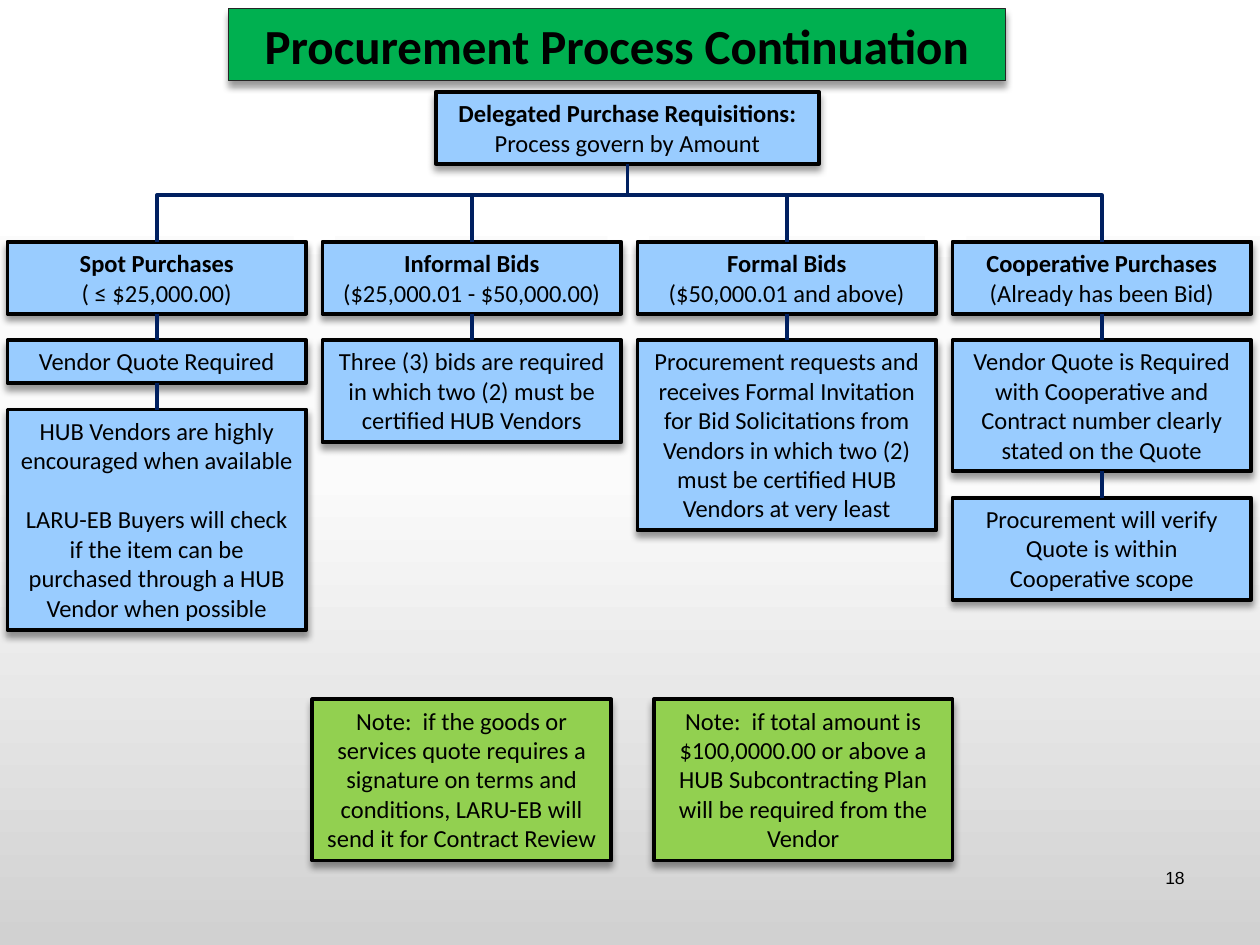
from dataclasses import dataclass

from pptx import Presentation, oxml, util as u
from pptx.dml.color import RGBColor
from pptx.enum import shapes, text
from pptx.oxml import ns

BLACK = RGBColor(0x00, 0x00, 0x00)
WHITE = RGBColor(0xFF, 0xFF, 0xFF)
GRAY = RGBColor(0x26, 0x26, 0x26)
NAVY = RGBColor(0x00, 0x20, 0x60)
BLUE = RGBColor(0x99, 0xCC, 0xFF)
GREEN = RGBColor(0x00, 0xB0, 0x50)
LIME = RGBColor(0x92, 0xD0, 0x50)

WIDE = 2.37
PITCH = 2.5
EDGE = 0.06
TOP = 1.92
HIGH = 0.57
GAP = 0.21
BEND = 40400
BACK = (
    f'<p:bg {ns.nsdecls("p", "a")}><p:bgPr><a:gradFill rotWithShape="1"><a:gsLst>'
    '<a:gs pos="0"><a:srgbClr val="FFFFFF"/></a:gs>'
    '<a:gs pos="50000"><a:srgbClr val="FBFBFB"/></a:gs>'
    '<a:gs pos="100000"><a:srgbClr val="D1D1D1"/></a:gs>'
    '</a:gsLst><a:lin ang="5400000" scaled="0"/></a:gradFill>'
    "<a:effectLst/></p:bgPr></p:bg>"
)
SHADE = (
    f'<a:outerShdw {ns.nsdecls("a")} blurRad="50800" dist="38100" dir="5400000" '
    'algn="t" rotWithShape="0"><a:srgbClr val="000000">'
    '<a:alpha val="40000"/></a:srgbClr></a:outerShdw>'
)


@dataclass
class Step:
    words: str
    high: float


@dataclass
class Branch:
    head: str
    steps: list[Step]


@dataclass
class Note:
    left: float
    words: str


BRANCHES = [
    Branch("Spot Purchases\n( ≤ $25,000.00)", [
        Step("Vendor Quote Required", 0.34),
        Step("HUB Vendors are highly encouraged when available\n"
             "LARU-EB Buyers will check if the item can be purchased "
             "through a HUB Vendor when possible", 1.75),
    ]),
    Branch("Informal Bids\n($25,000.01 - $50,000.00)", [
        Step("Three (3) bids are required in which two (2) must be "
             "certified HUB Vendors", 0.81),
    ]),
    Branch("Formal Bids\n($50,000.01 and above)", [
        Step("Procurement requests and receives Formal Invitation for Bid "
             "Solicitations from Vendors in which two (2) must be certified "
             "HUB Vendors at very least", 1.51),
    ]),
    Branch("Cooperative Purchases\n(Already has been Bid)", [
        Step("Vendor Quote is Required with Cooperative and Contract number "
             "clearly stated on the Quote", 1.04),
        Step("Procurement will verify Quote is within Cooperative scope", 0.81),
    ]),
]
NOTES = [
    Note(5.19, "Note:  if total amount is $100,0000.00 or above a HUB "
               "Subcontracting Plan will be required from the Vendor"),
    Note(2.48, "Note:  if the goods or services quote requires a signature on "
               "terms and conditions, LARU-EB will send it for Contract Review"),
]


def place(shape, left: float, top: float, wide: float, high: float) -> None:
    shape.left, shape.top = u.Inches(left), u.Inches(top)
    shape.width, shape.height = u.Inches(wide), u.Inches(high)


def paint(shape, fill: RGBColor, edge: RGBColor, weight: float) -> None:
    shape.fill.solid()
    shape.fill.fore_color.rgb = fill
    shape.line.color.rgb = edge
    shape.line.width = u.Pt(weight)
    shape.shadow.inherit = False
    effects = shape.element.spPr.find(ns.qn("a:effectLst"))
    effects.append(oxml.parse_xml(SHADE))


def style(para, size: float, face: str, bold: bool, align) -> None:
    para.alignment = align
    for run in para.runs:
        run.font.size = u.Pt(size)
        run.font.name = face
        run.font.bold = bold
        run.font.color.rgb = BLACK


def add_box(slide, left: float, top: float, wide: float, high: float,
            words: str, fill: RGBColor = BLUE, head: bool = False):
    box = slide.shapes.add_shape(
        shapes.MSO_SHAPE.RECTANGLE, u.Inches(left), u.Inches(top),
        u.Inches(wide), u.Inches(high))
    paint(box, fill, BLACK, 2.25)
    frame = box.text_frame
    frame.text = words
    frame.word_wrap = True
    frame.auto_size = text.MSO_AUTO_SIZE.SHAPE_TO_FIT_TEXT
    frame.vertical_anchor = text.MSO_ANCHOR.TOP
    for i, para in enumerate(frame.paragraphs):
        style(para, 14, "Calibri", head and i == 0, text.PP_ALIGN.CENTER)
        if i and not head:
            para.space_before = u.Pt(17)
    return box


def add_line(slide, kind, x1: float, y1: float, x2: float, y2: float):
    line = slide.shapes.add_connector(
        kind, u.Inches(x1), u.Inches(y1), u.Inches(x2), u.Inches(y2))
    line.line.color.rgb = NAVY
    line.line.width = u.Pt(2.25)
    line.element.spPr.append(
        oxml.parse_xml(f'<a:effectLst {ns.nsdecls("a")}/>'))
    return line


def join(slide, upper, lower) -> None:
    line = add_line(slide, shapes.MSO_CONNECTOR.STRAIGHT, 0, 0, 0, 0)
    line.begin_connect(upper, 2)
    line.end_connect(lower, 0)


def add_bend(slide, x1: float, y1: float, x2: float, y2: float) -> None:
    right = x2 > x1
    mid_x, mid_y = (x1 + x2) / 2, (y1 + y2) / 2
    half = (y2 - y1) / 2 * (-1 if right else 1)
    rise = abs(x2 - x1) / 2
    bend = add_line(slide, shapes.MSO_CONNECTOR.ELBOW, mid_x - half,
                    mid_y - rise, mid_x + half, mid_y + rise)
    form = bend.element.spPr
    form.xfrm.set("rot", str((270 if right else 90) * 60000))
    form.find(".//" + ns.qn("a:avLst")).append(oxml.parse_xml(
        f'<a:gd {ns.nsdecls("a")} name="adj1" fmla="val {BEND}"/>'))


def add_patch(slide, left: float, top: float) -> None:
    patch = slide.shapes.add_shape(
        shapes.MSO_SHAPE.RECTANGLE, u.Inches(left), u.Inches(top),
        u.Inches(0.33), u.Inches(0.17))
    patch.fill.solid()
    patch.fill.fore_color.rgb = WHITE
    patch.line.fill.background()
    patch.shadow.inherit = False


def main() -> None:
    deck = Presentation()
    deck.slide_width, deck.slide_height = u.Inches(10), u.Inches(7.5)
    slide = deck.slides.add_slide(deck.slide_layouts[5])
    slide.element.cSld.insert(0, oxml.parse_xml(BACK))

    for left, top in ((7.34, 1.87), (4.82, 1.85), (2.33, 1.85)):
        add_patch(slide, left, top)

    title = slide.shapes.title
    place(title, 1.81, 0.07, 6.17, HIGH)
    paint(title, GREEN, GRAY, 0.5)
    title.text_frame.text = "Procurement Process Continuation"
    title.text_frame.vertical_anchor = text.MSO_ANCHOR.BOTTOM
    title.text_frame.auto_size = text.MSO_AUTO_SIZE.NONE
    style(title.text_frame.paragraphs[0], 28, "Calibri", True,
          text.PP_ALIGN.CENTER)

    page = slide.shapes.add_textbox(
        u.Inches(7.42), u.Inches(6.83), u.Inches(2.08), u.Inches(0.5))
    page.text_frame.word_wrap = True
    page.text_frame.text = "18"
    style(page.text_frame.paragraphs[0], 10, "Arial", False,
          text.PP_ALIGN.RIGHT)

    add_box(slide, 3.46, 0.73, 3.04, HIGH,
            "Delegated Purchase Requisitions:\nProcess govern by Amount",
            head=True)
    for i, branch in enumerate(BRANCHES):
        left = EDGE + i * PITCH
        last = add_box(slide, left, TOP, WIDE, HIGH, branch.head, head=True)
        add_bend(slide, 4.98, 0.73 + HIGH, left + WIDE / 2, TOP)
        top = TOP + HIGH + GAP
        for step in branch.steps:
            box = add_box(slide, left, top, WIDE, step.high, step.words)
            join(slide, last, box)
            last = box
            top += step.high + GAP

    for note in NOTES:
        add_box(slide, note.left, 5.55, WIDE, 1.28, note.words, LIME)

    deck.save("out.pptx")


if __name__ == "__main__":
    main()
